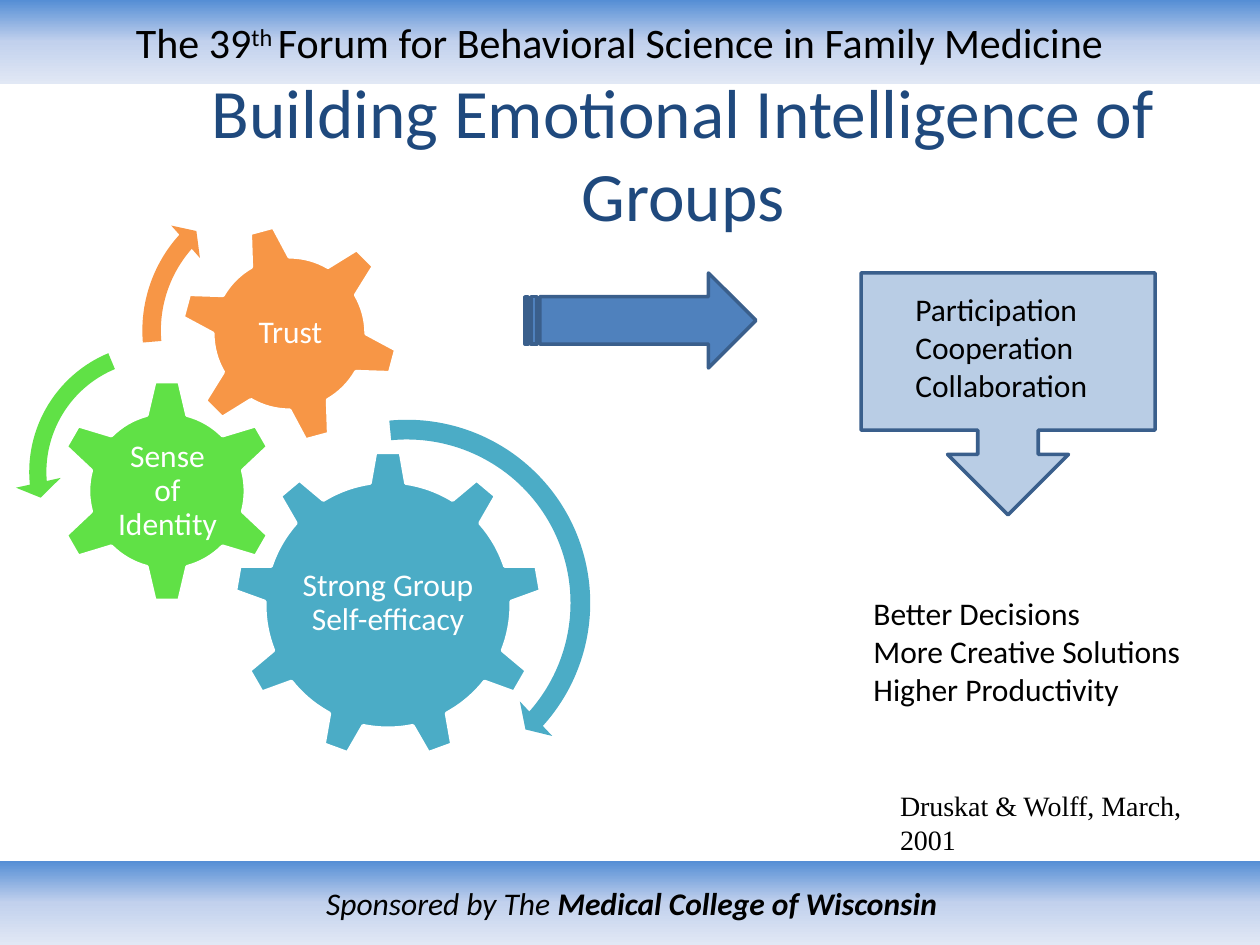
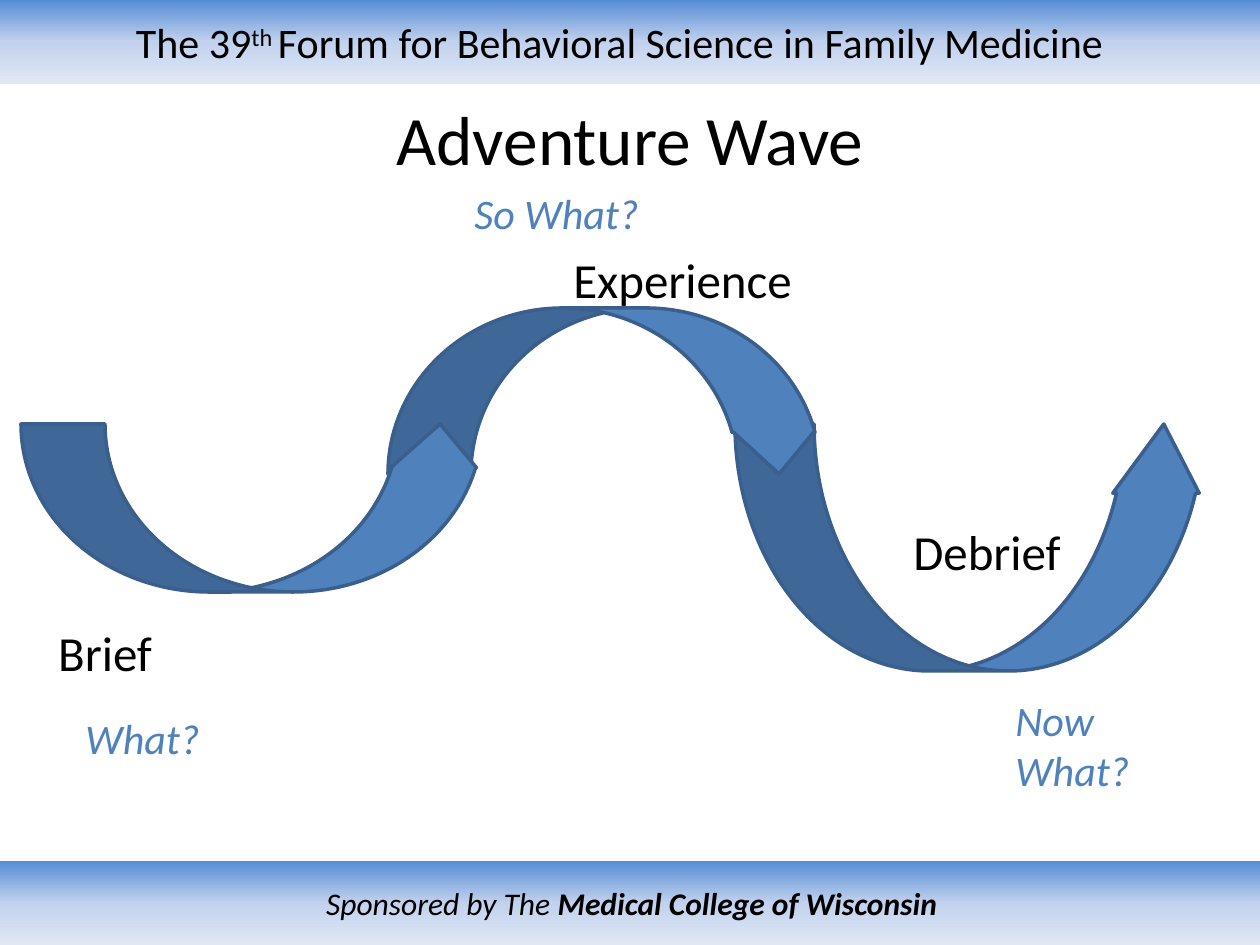
from lxml.etree import SubElement
from pptx import Presentation
from pptx.dml.color import RGBColor
from pptx.enum.shapes import MSO_SHAPE
from pptx.enum.text import MSO_ANCHOR, PP_ALIGN
from pptx.oxml.ns import qn
from pptx.util import Inches, Pt

PX = Inches(10) / 1260
COLORS = {
    "band_top": "558ED5", "band_middle": "C2D1ED", "band_bottom": "E1E8F5",
    "navy": "1F497D", "blue": "4F81BD", "outline": "3A5F8C", "pale": "B9CDE5",
    "teal": "4BACC6", "green": "60E146", "orange": "F79646",
    "black": "000000", "white": "FFFFFF",
}
BAND_STOPS = [(0, "band_top"), (50000, "band_middle"), (100000, "band_bottom")]
TITLE_SIZE = 39.6


def add_figure(slide, kind, at, fill, line=None, adjustments=(), rotation=0):
    figure = slide.shapes.add_shape(kind, *[round(v * PX) for v in at])
    figure.shadow.inherit = False
    figure.rotation = rotation
    figure.fill.solid()
    figure.fill.fore_color.rgb = RGBColor.from_string(COLORS[fill])
    if line:
        figure.line.color.rgb = RGBColor.from_string(COLORS[line])
        figure.line.width = Pt(2)
    else:
        figure.line.fill.background()
    for i, value in enumerate(adjustments):
        figure.adjustments[i] = value
    return figure


def add_text(slide, at, lines, size, color="black", align=PP_ALIGN.LEFT,
             anchor=MSO_ANCHOR.TOP, font="Calibri", italic=False,
             spacing=None, inset=None):
    """Write one paragraph for each of the lines."""
    frame = slide.shapes.add_textbox(*[round(v * PX) for v in at]).text_frame
    frame.word_wrap = True
    frame.vertical_anchor = anchor
    if inset is not None:
        frame.margin_left = frame.margin_right = round(inset * PX)
        frame.margin_top = frame.margin_bottom = round(inset * PX)
    frame.text = "\n".join(lines)
    for paragraph in frame.paragraphs:
        paragraph.alignment = align
        paragraph.line_spacing = spacing
        paragraph.font.name = font
        paragraph.font.size = Pt(size)
        paragraph.font.italic = italic
        paragraph.font.color.rgb = RGBColor.from_string(COLORS[color])


deck = Presentation()
deck.slide_width, deck.slide_height = round(1260 * PX), round(945 * PX)
groups, wave = [deck.slides.add_slide(deck.slide_layouts[6]) for _ in range(2)]

# Header and footer bands: box, right margin, size, italic, (text, baseline, bold)
bands = [
    ((0, 0, 1260, 84), 33, 24, False,
     [("The 39", 0, False), ("th ", 30000, False),
      ("Forum for Behavioral Science in Family Medicine", 0, False)]),
    ((0, 861, 1264, 84), 13, 18, True,
     [("Sponsored by The ", 0, False), ("Medical College of Wisconsin", 0, True)]),
]
for slide in (groups, wave):
    for at, right_margin, size, italic, parts in bands:
        band = add_figure(slide, MSO_SHAPE.RECTANGLE, at, "band_middle")
        band.fill.gradient()
        band.fill.gradient_angle = 270
        stops = band.fill._xPr.find(qn("a:gradFill")).find(qn("a:gsLst"))
        stops.clear()
        for position, color in BAND_STOPS:
            stop = SubElement(stops, qn("a:gs"), pos=str(position))
            SubElement(stop, qn("a:srgbClr"), val=COLORS[color])
        frame = band.text_frame
        frame.margin_right = round(right_margin * PX)
        frame.vertical_anchor = MSO_ANCHOR.MIDDLE
        paragraph = frame.paragraphs[0]
        paragraph.alignment = PP_ALIGN.CENTER
        paragraph.font.name = "Calibri"
        paragraph.font.size = Pt(size)
        paragraph.font.italic = italic
        paragraph.font.color.rgb = RGBColor.from_string(COLORS["black"])
        for text, baseline, bold in parts:
            run = paragraph.add_run()
            run.text = text
            if bold:
                run.font.bold = True
            if baseline:
                run.font._element.set("baseline", str(baseline))

# Slide 1: emotional intelligence of groups
add_text(groups, (116, 105, 1134, 94), ["Building Emotional Intelligence of Groups"],
         TITLE_SIZE, "navy", PP_ALIGN.CENTER, MSO_ANCHOR.MIDDLE)

gears = [
    (MSO_SHAPE.GEAR_9, (234, 451, 308, 308), "teal", 0,
     "Strong Group Self-efficacy", (296, 524, 184, 159)),
    (MSO_SHAPE.GEAR_6, (55, 379, 224, 224), "green", 0,
     "Sense of Identity", (112, 436, 111, 111)),
    (MSO_SHAPE.GEAR_6, (180, 224, 219, 219), "orange", 345,
     "Trust", (229, 272, 123, 123)),
]
for kind, at, color, rotation, label, label_at in gears:
    add_figure(groups, kind, at, color, "white", rotation=rotation)
    add_text(groups, label_at, [label], 18, "white", PP_ALIGN.CENTER,
             MSO_ANCHOR.MIDDLE, spacing=0.9, inset=4)

turns = [
    (MSO_SHAPE.CIRCULAR_ARROW, (210, 406, 394, 394), "teal",
     (0.05, 2.99, 25.13, 158.68, 0.06)),
    (MSO_SHAPE.LEFT_CIRCULAR_ARROW, (15, 329, 286, 286), "green",
     (0.06, 4.3, 104.89, 148.38, 0.08)),
    (MSO_SHAPE.CIRCULAR_ARROW, (130, 176, 309, 309), "orange",
     (0.06, 3.94, 133.14, 105.08, 0.07)),
]
for kind, at, color, adjustments in turns:
    add_figure(groups, kind, at, color, adjustments=adjustments)

add_figure(groups, MSO_SHAPE.STRIPED_RIGHT_ARROW, (525, 273, 231, 95), "blue", "outline")
add_figure(groups, MSO_SHAPE.DOWN_ARROW_CALLOUT, (861, 273, 294, 242), "pale", "outline")
add_text(groups, (903, 284, 242, 127),
         ["Participation", "Cooperation", "Collaboration"], 18)
add_text(groups, (861, 588, 347, 127),
         ["Better Decisions", "More Creative Solutions", "Higher Productivity"], 18)
add_text(groups, (900, 789, 307, 102), ["Druskat & Wolff, March, 2001"], 16,
         font="Times New Roman", inset=0)

# Slide 2: adventure wave
add_text(wave, (63, 91, 1134, 94), ["Adventure Wave"],
         TITLE_SIZE, "black", PP_ALIGN.CENTER, MSO_ANCHOR.MIDDLE)

stages = [
    ("Experience", (504, 243, 357, 72)),
    ("Brief", (0, 616, 210, 72)),
    ("Debrief", (861, 515, 252, 72)),
]
for stage, at in stages:
    add_text(wave, at, [stage], 28, align=PP_ALIGN.CENTER)

swings = [
    (MSO_SHAPE.CURVED_UP_ARROW, (735, 424, 472, 247), (0.32, 0.35, 0.28)),
    (MSO_SHAPE.CURVED_DOWN_ARROW, (388, 308, 431, 166), (0.5, 0.48, 0.25)),
    (MSO_SHAPE.CURVED_UP_ARROW, (21, 424, 462, 168), (0.5, 0.51, 0.26)),
]
for kind, at, adjustments in swings:
    add_figure(wave, kind, at, "blue", "outline", adjustments)

questions = [("What?", 73, 706), ("So What?", 462, 181), ("Now What?", 1003, 688)]
for question, left, top in questions:
    add_text(wave, (left, top, 220, 63), [question], 24, "blue", italic=True)

deck.save("out.pptx")
